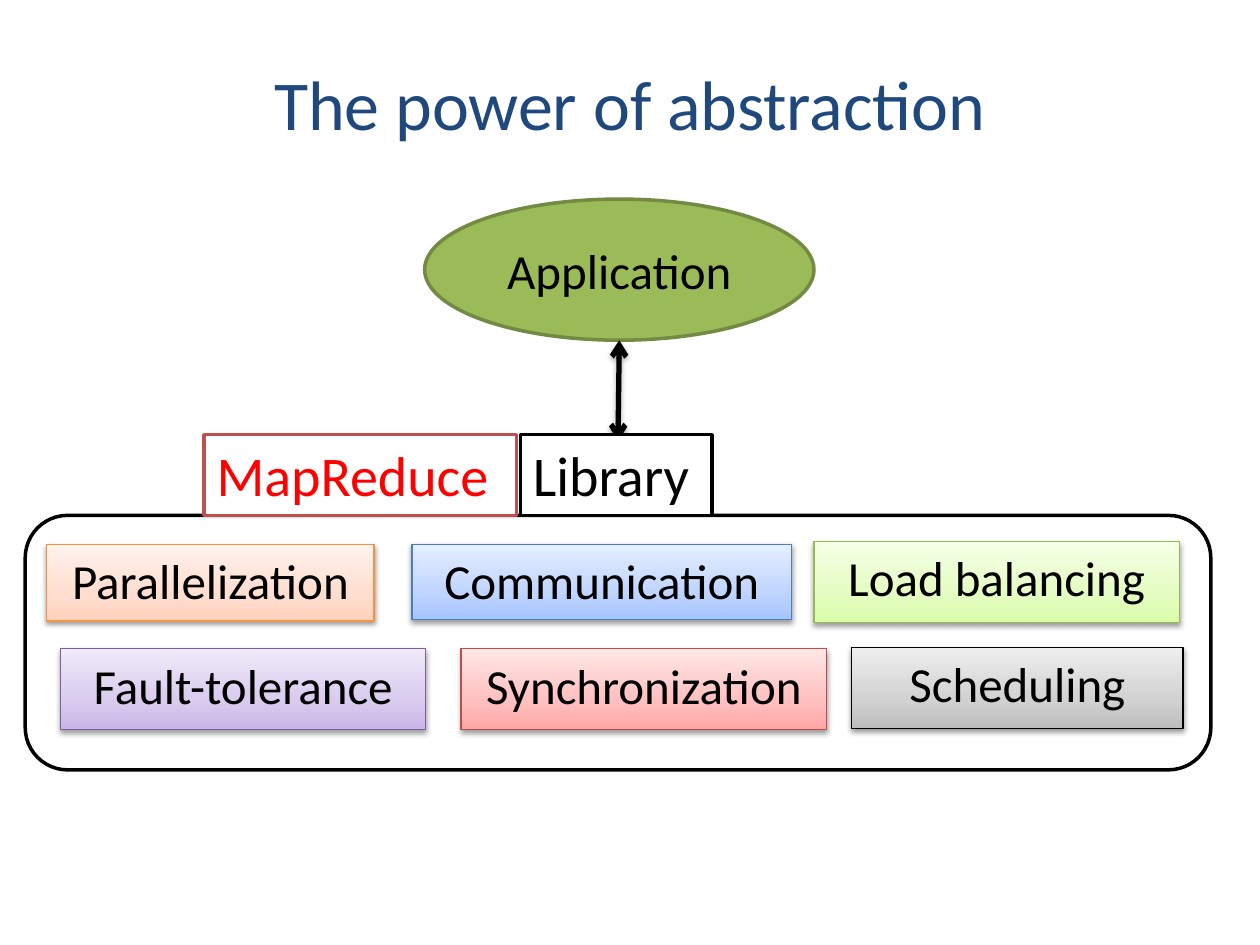
from lxml import etree
from pptx import Presentation
from pptx import util as u
from pptx.dml.color import RGBColor
from pptx.enum import shapes, text
from pptx.oxml.ns import qn

COLORS = {
    "title": "1F497D", "black": "000000", "white": "FFFFFF", "red": "FF0000",
    "brick": "C0504D", "green": "9BBB59", "dark_green": "738A42",
}
FONT = "Calibri"
SHAPE = shapes.MSO_SHAPE

# label, box inside the panel, gradient stops at 0/35/100 %, outline
SERVICES = [
    ("Parallelization", (0.17, 0.23, 2.6, 0.61), ("FFD2BD", "FFDED0", "FFF2ED"), "F69240"),
    ("Communication", (3.07, 0.23, 3.01, 0.6), ("A4C4FF", "BFD4FF", "E6EEFF"), "4B7EBC"),
    ("Fault-tolerance", (0.28, 1.06, 2.9, 0.64), ("C9B5E8", "D8CBEE", "F0EAF9"), "7D60A0"),
    ("Load balancing", (6.26, 0.21, 2.9, 0.64), ("DAFDA7", "E4FCC2", "F5FFE7"), "98B955"),
    ("Synchronization", (3.46, 1.06, 2.9, 0.64), ("FFA6A5", "FFC0BF", "FFE7E7"), "BF4C48"),
    ("Scheduling", (6.56, 1.05, 2.63, 0.64), ("BDBDBD", "D1D1D1", "EEEEEE"), "000000"),
]


def rgb(color):
    return RGBColor.from_string(COLORS.get(color, color))


def sub(parent, tag, **attrs):
    return etree.SubElement(parent, qn(tag), {k: str(v) for k, v in attrs.items()})


def add_shadow(effects, alpha, distance):
    shadow = sub(effects, "a:outerShdw", blurRad=u.Pt(3.1), dist=u.Pt(distance),
                 dir=5400000, rotWithShape=0)
    color = sub(shadow, "a:srgbClr", val=COLORS["black"])
    sub(color, "a:alpha", val=alpha * 1000)


def set_gradient(sp, stops):
    """Three stops running from the bottom edge upwards."""
    sp.fill.gradient()
    sp.fill.gradient_angle = 90
    stop_list = sp.element.spPr.find(qn("a:gradFill")).find(qn("a:gsLst"))
    for old in list(stop_list):
        stop_list.remove(old)
    for position, color in zip((0, 35, 100), stops):
        sub(sub(stop_list, "a:gs", pos=position * 1000), "a:srgbClr", val=color)


def add_box(s, kind, box, line, width, fill=None):
    sp = s.shapes.add_shape(kind, *map(u.Inches, box))
    if fill:
        sp.fill.solid()
        sp.fill.fore_color.rgb = rgb(fill)
    else:
        sp.fill.background()
    sp.line.color.rgb = rgb(line)
    sp.line.width = u.Pt(width)
    sp.shadow.inherit = False
    return sp


def write(sp, label, size, color="black", align=text.PP_ALIGN.CENTER,
          anchor=text.MSO_ANCHOR.TOP, wrap=True):
    tf = sp.text_frame
    tf.word_wrap = wrap
    tf.vertical_anchor = anchor
    p = tf.paragraphs[0]
    p.alignment = align
    r = p.add_run()
    r.text = label
    r.font.name = FONT
    r.font.size = u.Pt(size)
    r.font.color.rgb = rgb(color)


def add_title(s, box):
    sp = s.shapes.add_textbox(*map(u.Inches, box))
    write(sp, "The power of abstraction", 40, "title", anchor=text.MSO_ANCHOR.MIDDLE)


def add_services(s, box):
    left, top = box[:2]
    for label, (x, y, w, h), stops, line in SERVICES:
        sp = add_box(s, SHAPE.RECTANGLE, (left + x, top + y, w, h), line, 0.75)
        set_gradient(sp, stops)
        add_shadow(sp.element.spPr.find(qn("a:effectLst")), 38, 1.6)
        write(sp, label, 28)
    add_box(s, SHAPE.ROUNDED_RECTANGLE, box, "black", 2)


def add_application(s, box):
    left, top, width, height = box
    sp = add_box(s, SHAPE.OVAL, box, "dark_green", 2, "green")
    write(sp, "Application", 28, anchor=text.MSO_ANCHOR.MIDDLE)

    # Two-way arrow down to the library
    x, y = left + width / 2, top + height
    arrow = s.shapes.add_connector(
        shapes.MSO_CONNECTOR.STRAIGHT,
        *map(u.Inches, (x, y, x - 0.01, y + 0.8)))
    arrow.line.color.rgb = rgb("black")
    arrow.line.width = u.Pt(3)
    spPr = arrow.element.spPr
    for end in ("a:headEnd", "a:tailEnd"):
        sub(spPr.find(qn("a:ln")), end, type="arrow")
    add_shadow(sub(spPr, "a:effectLst"), 35, 1.8)


def add_library_tabs(s, box):
    left, top, width, height = box
    tabs = [("Library", 2.51, width - 2.51, "black", "black"),
            ("MapReduce", 0, 2.48, "brick", "red")]
    for label, x, w, line, color in tabs:
        sp = add_box(s, SHAPE.RECTANGLE, (left + x, top, w, height), line, 2, "white")
        write(sp, label, 32, color, text.PP_ALIGN.LEFT, wrap=False)
        sp.text_frame.auto_size = text.MSO_AUTO_SIZE.SHAPE_TO_FIT_TEXT


def main():
    prs = Presentation()
    prs.slide_width, prs.slide_height = u.Inches(10), u.Inches(7.5)
    s = prs.slides.add_slide(prs.slide_layouts[6])
    add_title(s, (0.5, 0.19, 9, 1.25))
    add_services(s, (0.2, 4.09, 9.41, 2.02))
    add_application(s, (3.37, 1.58, 3.09, 1.12))
    add_library_tabs(s, (1.62, 3.45, 4.03, 0.64))
    prs.save("out.pptx")


if __name__ == "__main__":
    main()
